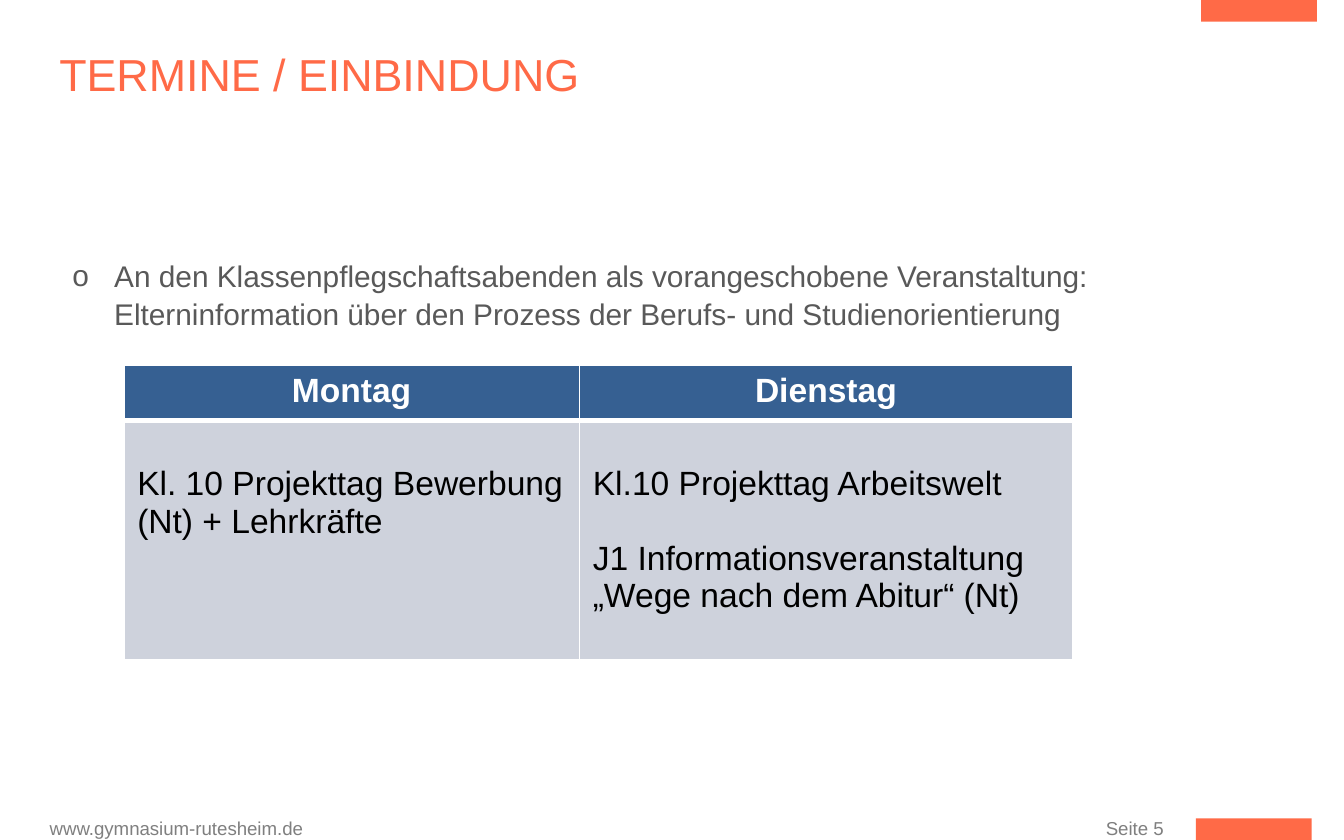
from lxml import etree
from pptx import Presentation
from pptx import util as u
from pptx.dml.color import RGBColor
from pptx.enum import shapes, text
from pptx.oxml import ns

COLORS = {
    "accent": "FF6A47", "footer": "7F7F7F", "body": "595959",
    "header": "366092", "cell": "CED2DC", "white": "FFFFFF", "black": "000000",
}


def add_text(paragraph, content, size, color, bold=False):
    run = paragraph.add_run()
    run.text = content
    run.font.name = "Arial"
    run.font.size = u.Pt(size)
    run.font.bold = bold
    run.font.color.rgb = RGBColor.from_string(COLORS[color])


def set_frame(frame, left=0, top=0, right=0, bottom=0):
    """Wrap the text, anchor it at the top and set its insets in cm."""
    frame.word_wrap = True
    frame.auto_size = text.MSO_AUTO_SIZE.NONE
    frame.vertical_anchor = text.MSO_ANCHOR.TOP
    frame.margin_left, frame.margin_top = u.Cm(left), u.Cm(top)
    frame.margin_right, frame.margin_bottom = u.Cm(right), u.Cm(bottom)


presentation = Presentation()
presentation.slide_width = u.Cm(25.4)
presentation.slide_height = u.Cm(15.88)
slide = presentation.slides.add_slide(presentation.slide_layouts[5])

# Footer texts and accent bars
for content, left, width, height in [
    ("www.gymnasium-rutesheim.de", 0.94, 20, 0.43),
    ("Seite 5", 20.9, 4.4, 0.61),
]:
    footer = slide.shapes.add_textbox(u.Cm(left), u.Cm(15.44), u.Cm(width), u.Cm(height))
    set_frame(footer.text_frame, right=0.2)
    add_text(footer.text_frame.paragraphs[0], content, 10, "footer")

for left, top in [(22.7, 0), (22.6, 15.47)]:
    bar = slide.shapes.add_shape(
        shapes.MSO_SHAPE.RECTANGLE, u.Cm(left), u.Cm(top), u.Cm(2.19), u.Cm(0.41))
    bar.shadow.inherit = False
    bar.fill.solid()
    bar.fill.fore_color.rgb = RGBColor.from_string(COLORS["accent"])
    bar.line.fill.background()

# Title
title = slide.shapes.title
title.left, title.top, title.width, title.height = u.Cm(1.12), u.Cm(0.79), u.Cm(21.2), u.Cm(2.06)
set_frame(title.text_frame, top=0.1, right=0.3)
heading = title.text_frame.paragraphs[0]
heading.alignment = text.PP_ALIGN.LEFT
add_text(heading, "TERMINE / EINBINDUNG", 24, "accent")

# Bullet with its continuation line
body = slide.shapes.add_textbox(u.Cm(1.12), u.Cm(4.75), u.Cm(22.15), u.Cm(1.8))
set_frame(body.text_frame, 0.25, 0.13, 0.25, 0.13)
for index, content in enumerate([
    "An den Klassenpflegschaftsabenden als vorangeschobene Veranstaltung:",
    "Elterninformation über den Prozess der Berufs- und Studienorientierung",
]):
    paragraph = body.text_frame.paragraphs[0] if index == 0 else body.text_frame.add_paragraph()
    properties = paragraph._p.get_or_add_pPr()
    properties.set("marL", str(u.Cm(0.79)))
    if index == 0:
        properties.set("indent", str(u.Cm(-0.79)))
        etree.SubElement(properties, ns.qn("a:buFont")).set("typeface", "Arial")
        etree.SubElement(properties, ns.qn("a:buChar")).set("char", "o")
    else:
        paragraph.space_before = u.Pt(1)
    add_text(paragraph, content, 16, "body")

# Table of dates
days = [
    ("Montag", ["Kl. 10 Projekttag Bewerbung (Nt) + Lehrkräfte"]),
    ("Dienstag", ["Kl.10 Projekttag Arbeitswelt",
                  "J1 Informationsveranstaltung „Wege nach dem Abitur“ (Nt)"]),
]
column_widths = [8.61, 9.32]
row_heights = [1.04, 4.52]
table = slide.shapes.add_table(
    2, 2, u.Cm(2.34), u.Cm(6.91), u.Cm(sum(column_widths)), u.Cm(sum(row_heights))).table
for column, width in zip(table.columns, column_widths):
    column.width = u.Cm(width)
for row, height in zip(table.rows, row_heights):
    row.height = u.Cm(height)

for column_index, (day, events) in enumerate(days):
    for row_index, lines in enumerate([[day], events]):
        is_header = row_index == 0
        cell = table.cell(row_index, column_index)
        cell.margin_top = u.Cm(0.13 if is_header else 0.84)
        for index, content in enumerate(lines):
            frame = cell.text_frame
            paragraph = frame.paragraphs[0] if index == 0 else frame.add_paragraph()
            if is_header:
                paragraph.alignment = text.PP_ALIGN.CENTER
            if index:
                paragraph.space_before = u.Pt(20)
            add_text(paragraph, content, 18, "white" if is_header else "black", is_header)
        properties = cell._tc.get_or_add_tcPr()
        for side in ["L", "R", "T", "B"]:
            # The rule between header and body is thicker
            is_rule = side == ("B" if is_header else "T")
            border = etree.SubElement(properties, ns.qn(f"a:ln{side}"))
            border.set("w", str(u.Pt(3 if is_rule else 1)))
            fill = etree.SubElement(border, ns.qn("a:solidFill"))
            etree.SubElement(fill, ns.qn("a:srgbClr")).set("val", COLORS["white"])
        cell.fill.solid()
        cell.fill.fore_color.rgb = RGBColor.from_string(COLORS["header" if is_header else "cell"])

presentation.save("out.pptx")
